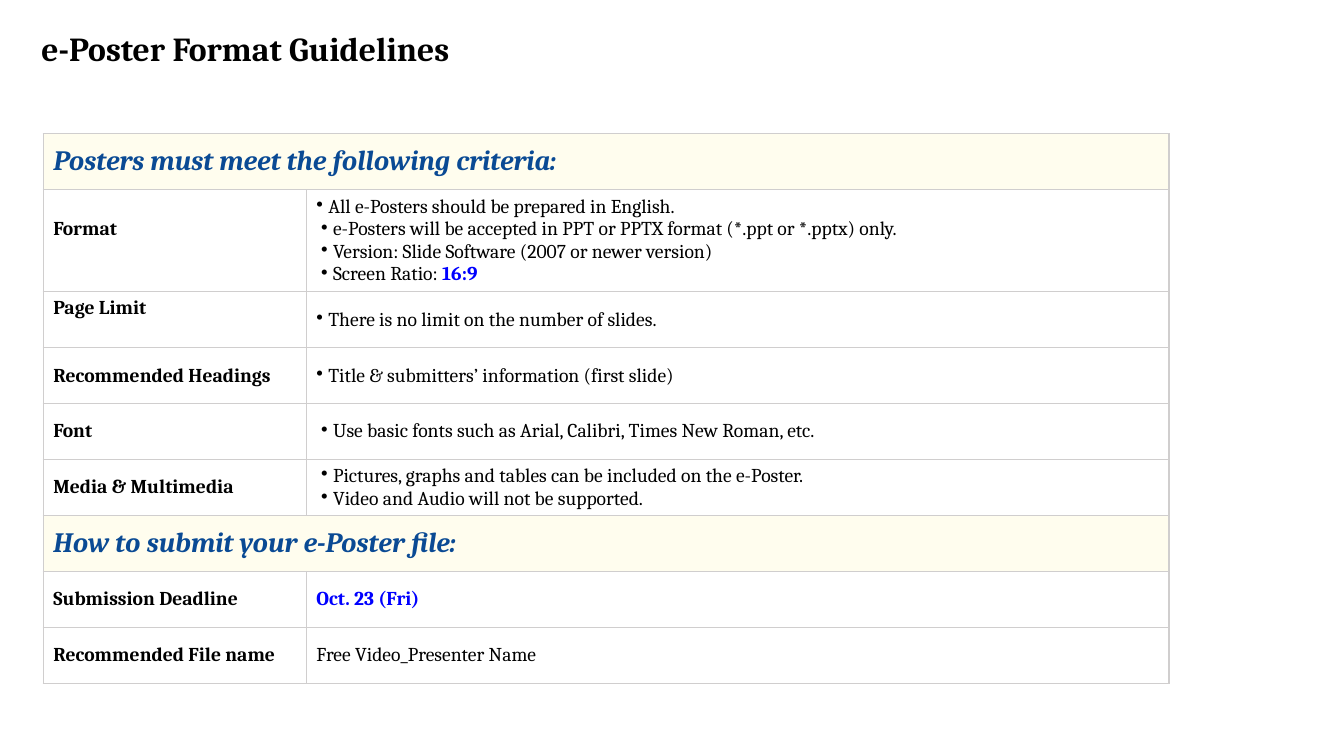
from lxml import etree
from pptx import Presentation
from pptx.dml.color import RGBColor
from pptx.enum.text import MSO_ANCHOR, PP_ALIGN
from pptx.oxml.ns import qn
from pptx.util import Cm, Pt

MIDDLE = MSO_ANCHOR.MIDDLE
LEFT = PP_ALIGN.LEFT

TITLE = "e-Poster Format Guidelines"
# Each section: heading, then rows of (label, lines).
# Each line: (bullet style, plain text, highlighted text).
SECTIONS = [
    ("Posters must meet the following criteria:", [
        ("Format", [
            ("flush", "All e-Posters should be prepared in English.", ""),
            ("inset", "e-Posters will be accepted in PPT or PPTX format (*.ppt or *.pptx) only.", ""),
            ("inset", "Version: Slide Software (2007 or newer version)", ""),
            ("inset", "Screen Ratio: ", "16:9"),
        ]),
        ("Page Limit", [("flush", "There is no limit on the number of slides.", "")]),
        ("Recommended Headings", [("flush", "Title & submitters’ information (first slide)", "")]),
        ("Font", [("inset", "Use basic fonts such as Arial, Calibri, Times New Roman, etc.", "")]),
        ("Media & Multimedia", [
            ("inset", "Pictures, graphs and tables can be included on the e-Poster.", ""),
            ("inset", "Video and Audio will not be supported.", ""),
        ]),
    ]),
    ("How to submit your e-Poster file:", [
        ("Submission Deadline", [("none", "", "Oct. 23 (Fri)")]),
        ("Recommended File name", [("none", "Free Video_Presenter Name", "")]),
    ]),
]
RAISED_LABELS = {"Format", "Page Limit"}

COLORS = {"text": "000000", "heading": "0A4A94", "highlight": "0000FF",
          "band": "FFFDEE", "border": "D0CECE"}
FONT = "Cambria"
BULLET_START = {"flush": Cm(0), "inset": Cm(0.12)}
BULLET_WIDTH = Cm(0.3)
COLUMN_WIDTHS = [Cm(6.63), Cm(21.74)]
ROW_HEIGHT, TALL_ROW_HEIGHT = Cm(1.41), Cm(2.57)
RAISED_MARGIN = Cm(0.7)


def color(name):
    return RGBColor.from_string(COLORS[name])


def style(font, size, color_name, bold=False, italic=False):
    font.name = FONT
    font.size = Pt(size)
    font.bold = bold
    font.italic = italic
    font.color.rgb = color(color_name)


def add_borders(cell):
    properties = cell._tc.get_or_add_tcPr()
    for side in ("a:lnL", "a:lnR", "a:lnT", "a:lnB"):
        line = etree.SubElement(properties, qn(side), w=str(Pt(1)))
        fill = etree.SubElement(line, qn("a:solidFill"))
        etree.SubElement(fill, qn("a:srgbClr"), val=COLORS["border"])


def add_bullet(paragraph, bullet):
    properties = paragraph._p.get_or_add_pPr()
    properties.set("marL", str(BULLET_START[bullet] + BULLET_WIDTH))
    properties.set("indent", str(-BULLET_WIDTH))
    etree.SubElement(properties, qn("a:buChar"), char="•")


def write_heading(cell, heading):
    cell.fill.solid()
    cell.fill.fore_color.rgb = color("band")
    cell.text = heading
    style(cell.text_frame.paragraphs[0].font, 20, "heading", True, True)


def write_label(cell, label):
    cell.text = label
    style(cell.text_frame.paragraphs[0].font, 14, "text", True)
    if label in RAISED_LABELS:
        cell.margin_bottom = RAISED_MARGIN


def write_lines(cell, lines):
    frame = cell.text_frame
    for index, (bullet, plain, highlighted) in enumerate(lines):
        paragraph = frame.paragraphs[0] if index == 0 else frame.add_paragraph()
        if bullet in BULLET_START:
            add_bullet(paragraph, bullet)
        style(paragraph.font, 14, "text")
        if plain:
            paragraph.add_run().text = plain
        if highlighted:
            run = paragraph.add_run()
            run.text = highlighted
            style(run.font, 14, "highlight", True)


def add_title(slide):
    title = slide.shapes.title
    title.left, title.top, title.width, title.height = Cm(0.79), Cm(0.48), Cm(25.4), Cm(1.47)
    title.text = TITLE
    title.text_frame.vertical_anchor = MIDDLE
    paragraph = title.text_frame.paragraphs[0]
    paragraph.alignment = LEFT
    style(paragraph.font, 24, "text", True)


def add_guidelines(slide):
    rows = []
    for heading, entries in SECTIONS:
        rows.append((heading, None))
        rows.extend(entries)
    heights = [TALL_ROW_HEIGHT if lines and len(lines) > 2 else ROW_HEIGHT
               for _, lines in rows]
    table = slide.shapes.add_table(len(rows), len(COLUMN_WIDTHS), Cm(1.09), Cm(3.37),
                                   sum(COLUMN_WIDTHS), sum(heights)).table
    table.first_row = table.horz_banding = False
    for column, width in zip(table.columns, COLUMN_WIDTHS):
        column.width = width
    for index, ((label, lines), height) in enumerate(zip(rows, heights)):
        table.rows[index].height = height
        left_cell, right_cell = table.cell(index, 0), table.cell(index, 1)
        for cell in (left_cell, right_cell):
            add_borders(cell)
            cell.fill.background()
            cell.vertical_anchor = MIDDLE
        if lines is None:
            left_cell.merge(right_cell)
            write_heading(left_cell, label)
        else:
            write_label(left_cell, label)
            write_lines(right_cell, lines)


def main():
    presentation = Presentation()
    presentation.slide_width, presentation.slide_height = Cm(33.87), Cm(19.05)
    title_only = presentation.slide_layouts[5]
    slide = presentation.slides.add_slide(title_only)
    add_title(slide)
    add_guidelines(slide)
    presentation.save("out.pptx")


if __name__ == "__main__":
    main()
